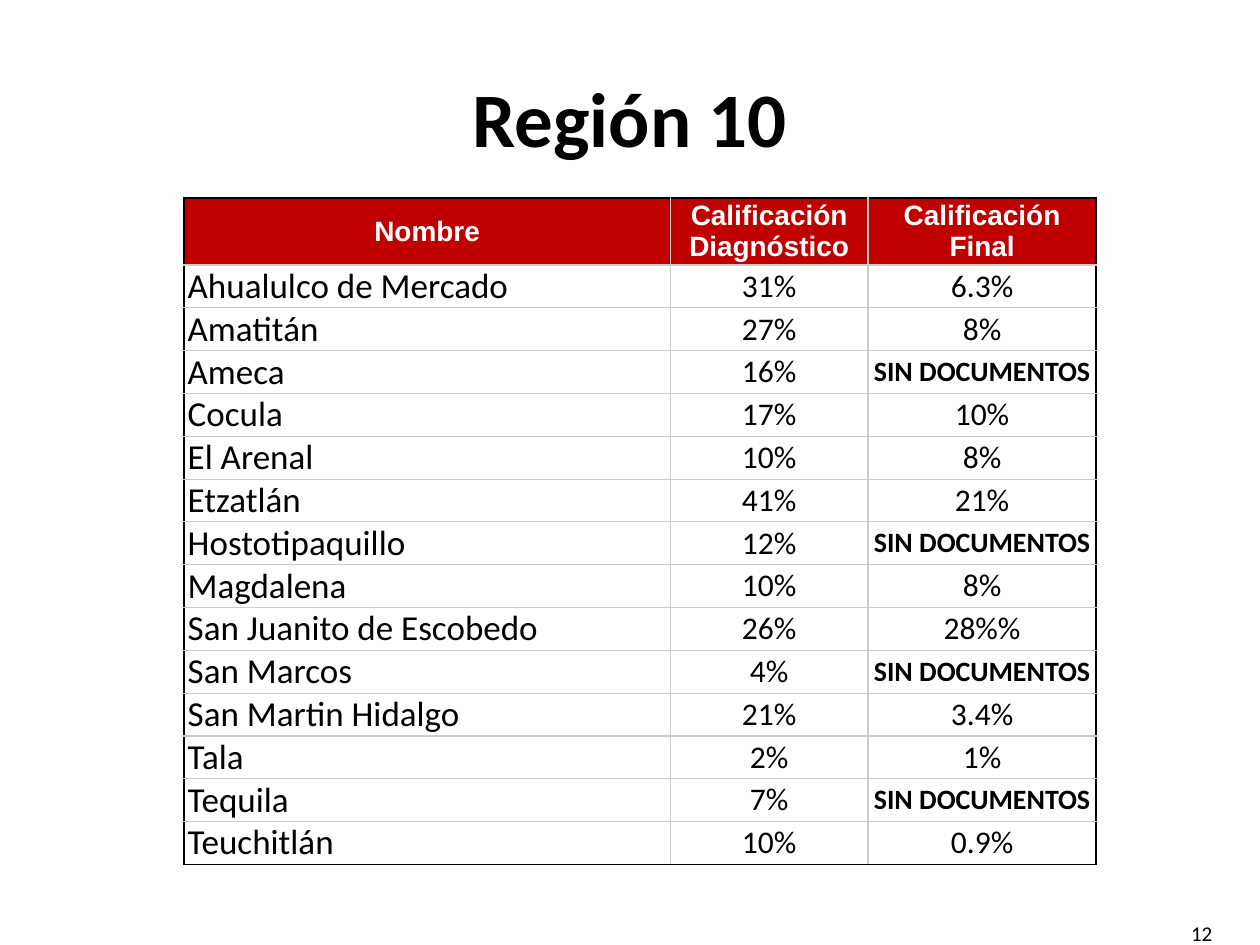
from dataclasses import dataclass
from typing import NamedTuple

from lxml import etree
from pptx import Presentation
from pptx.dml.color import RGBColor
from pptx.enum.text import MSO_ANCHOR, PP_ALIGN
from pptx.oxml.ns import qn
from pptx.util import Inches, Pt

LEFT, CENTER, RIGHT = PP_ALIGN.LEFT, PP_ALIGN.CENTER, PP_ALIGN.RIGHT
MIDDLE = MSO_ANCHOR.MIDDLE
BLACK = RGBColor(0x00, 0x00, 0x00)
WHITE = RGBColor(0xFF, 0xFF, 0xFF)
RED = RGBColor(0xC0, 0x00, 0x00)
GREY = RGBColor(0xCC, 0xCC, 0xCC)


@dataclass(frozen=True)
class TextStyle:
    size: float
    align: PP_ALIGN
    bold: bool = False
    font: str = "Calibri"
    color: RGBColor = BLACK


class Municipality(NamedTuple):
    name: str
    diagnostic: str
    final: str


TITLE = TextStyle(44, CENTER, bold=True)
PAGE_NUMBER = TextStyle(12, RIGHT)
HEADER = TextStyle(16, CENTER, bold=True, font="Arial", color=WHITE)
NAME = TextStyle(20, LEFT)
GRADE = TextStyle(18, CENTER)
MISSING = TextStyle(16, CENTER, bold=True)

NO_DOCUMENTS = "SIN DOCUMENTOS"
HEADINGS = ("Nombre", "Calificación Diagnóstico", "Calificación Final")
MUNICIPALITIES = [
    Municipality("Ahualulco de Mercado", "31%", "6.3%"),
    Municipality("Amatitán", "27%", "8%"),
    Municipality("Ameca", "16%", NO_DOCUMENTS),
    Municipality("Cocula", "17%", "10%"),
    Municipality("El Arenal", "10%", "8%"),
    Municipality("Etzatlán", "41%", "21%"),
    Municipality("Hostotipaquillo", "12%", NO_DOCUMENTS),
    Municipality("Magdalena", "10%", "8%"),
    Municipality("San Juanito de Escobedo", "26%", "28%%"),
    Municipality("San Marcos", "4%", NO_DOCUMENTS),
    Municipality("San Martin Hidalgo", "21%", "3.4%"),
    Municipality("Tala", "2%", "1%"),
    Municipality("Tequila", "7%", NO_DOCUMENTS),
    Municipality("Teuchitlán", "10%", "0.9%"),
]
COLUMN_WIDTHS = (3.86, 1.57, 1.81)
HEADER_HEIGHT, ROW_HEIGHT = 0.49, 0.34


def write(text_frame, text: str, style: TextStyle) -> None:
    text_frame.text = text
    paragraph = text_frame.paragraphs[0]
    paragraph.alignment = style.align
    font = paragraph.runs[0].font
    font.name = style.font
    font.size = Pt(style.size)
    font.bold = style.bold
    font.color.rgb = style.color


def add_text(slide, left: float, top: float, width: float, height: float,
             text: str, style: TextStyle) -> None:
    box = slide.shapes.add_textbox(Inches(left), Inches(top), Inches(width), Inches(height))
    box.text_frame.word_wrap = True
    box.text_frame.vertical_anchor = MIDDLE
    write(box.text_frame, text, style)


def set_borders(cell, outer_sides: dict[str, bool]) -> None:
    properties = cell._tc.get_or_add_tcPr()
    for index, (side, is_outer) in enumerate(outer_sides.items()):
        color, width = (BLACK, 1) if is_outer else (GREY, 0.75)
        line = etree.Element(qn(f"a:{side}"), w=str(Pt(width)))
        fill = etree.SubElement(line, qn("a:solidFill"))
        etree.SubElement(fill, qn("a:srgbClr"), val=str(color))
        properties.insert(index, line)


def style_for(row: int, column: int, text: str) -> TextStyle:
    if row == 0:
        return HEADER
    if column == 0:
        return NAME
    return MISSING if text == NO_DOCUMENTS else GRADE


def add_grades(slide, left: float, top: float) -> None:
    entries = [HEADINGS, *MUNICIPALITIES]
    last_row, last_column = len(entries) - 1, len(HEADINGS) - 1
    height = HEADER_HEIGHT + ROW_HEIGHT * last_row
    grades = slide.shapes.add_table(
        len(entries), len(HEADINGS), Inches(left), Inches(top),
        Inches(sum(COLUMN_WIDTHS)), Inches(height)).table
    grades.first_row = grades.horz_banding = False
    for column, width in zip(grades.columns, COLUMN_WIDTHS):
        column.width = Inches(width)
    for r, entry in enumerate(entries):
        grades.rows[r].height = Inches(ROW_HEIGHT if r else HEADER_HEIGHT)
        for c, text in enumerate(entry):
            cell = grades.cell(r, c)
            cell.margin_left = cell.margin_right = Inches(0.03)
            cell.margin_top = cell.margin_bottom = Inches(0)
            cell.vertical_anchor = MIDDLE
            cell.fill.solid()
            cell.fill.fore_color.rgb = WHITE if r else RED
            set_borders(cell, {"lnL": c == 0, "lnR": c == last_column,
                               "lnT": r == 0, "lnB": r == last_row})
            write(cell.text_frame, text, style_for(r, c, text))


def main() -> None:
    presentation = Presentation()
    presentation.slide_width = Inches(10)
    presentation.slide_height = Inches(7.5)
    slide = presentation.slides.add_slide(presentation.slide_layouts[6])
    add_text(slide, 7.39, 7.21, 2.33, 0.4, "12", PAGE_NUMBER)
    add_grades(slide, 1.46, 1.57)
    add_text(slide, 0.5, 0.3, 9, 1.25, "Región 10", TITLE)
    presentation.save("out.pptx")


if __name__ == "__main__":
    main()
